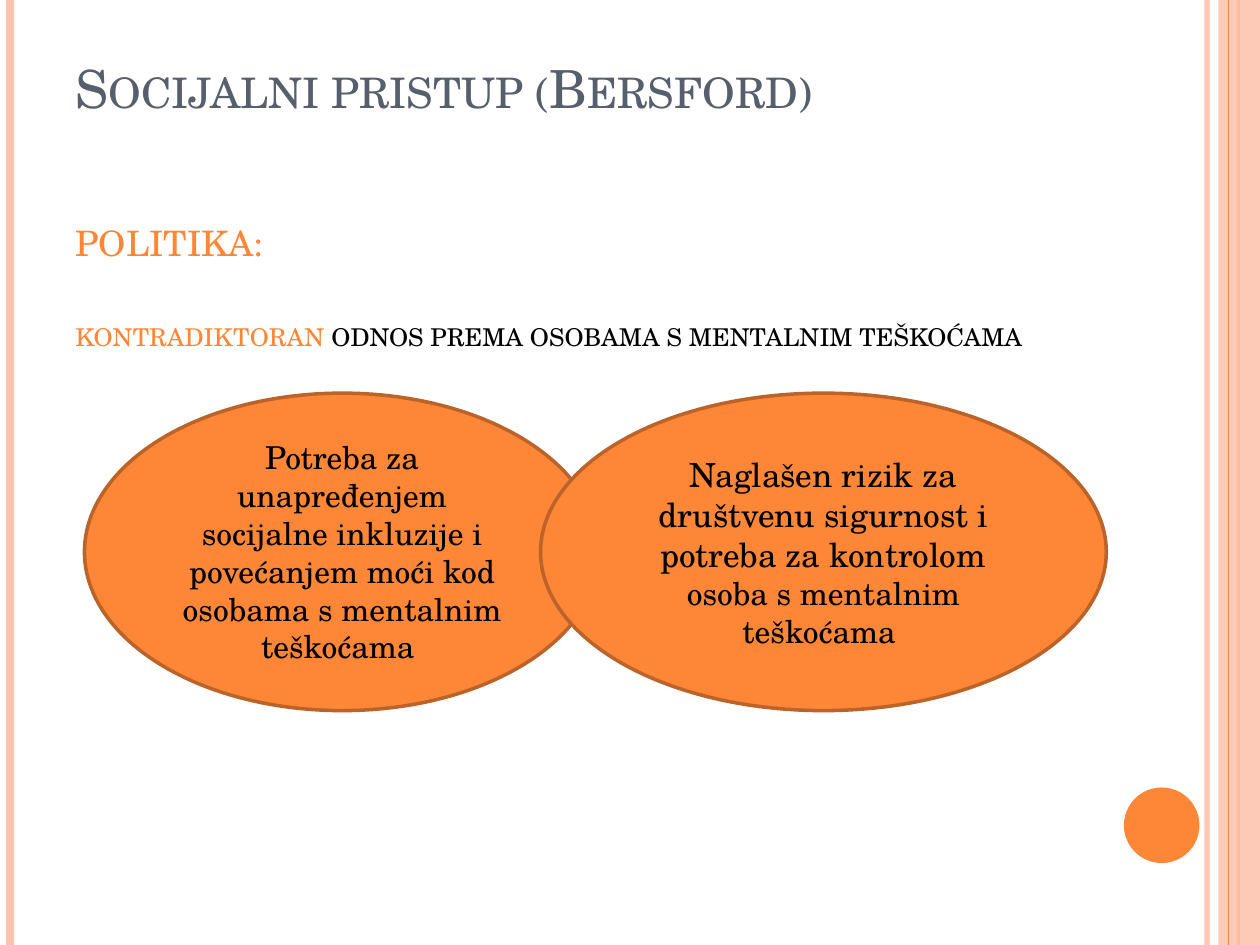
from lxml.etree import SubElement
from pptx import Presentation
from pptx.dml.color import RGBColor
from pptx.enum.shapes import MSO_CONNECTOR as Connector, MSO_SHAPE as Shape
from pptx.enum.text import MSO_ANCHOR as Anchor, PP_ALIGN as Align
from pptx.oxml.ns import qn
from pptx.util import Inches, Pt

COLORS = {"peach": "FEC3AE", "orange": "FE8637", "rust": "BC6329",
          "slate": "575F6D", "black": "000000"}
FONT = "TeX Gyre Schola"


def color(name):
    return RGBColor.from_string(COLORS[name])


def set_opacity(element, percent):
    """Add an alpha value to the solid color inside element."""
    rgb = next(element.iter(qn("a:srgbClr")))
    SubElement(rgb, qn("a:alpha")).set("val", str(percent * 1000))


def add_stripe(page, x, width, name, opacity=100):
    """Draw a vertical line over the full slide height."""
    stripe = page.shapes.add_connector(
        Connector.STRAIGHT, Inches(x), 0, Inches(x), Inches(7.5))
    stripe.line.width = Pt(width)
    stripe.line.color.rgb = color(name)
    properties = stripe._element.spPr
    if opacity < 100:
        set_opacity(properties, opacity)
    SubElement(properties, qn("a:effectLst"))


def add_filled(page, kind, place, fill, outline=None):
    shape = page.shapes.add_shape(kind, *map(Inches, place))
    shape.shadow.inherit = False
    shape.fill.solid()
    shape.fill.fore_color.rgb = color(fill)
    if outline:
        shape.line.color.rgb = color(outline)
        shape.line.width = Pt(2)
    else:
        shape.line.fill.background()
    return shape


def add_span(para, text, size, name="black"):
    span = para.add_run()
    span.text = text
    span.font.name = FONT
    span.font.size = Pt(size)
    span.font.color.rgb = color(name)
    return span


def add_text_box(page, place, anchor=Anchor.TOP):
    frame = page.shapes.add_textbox(*map(Inches, place)).text_frame
    frame.word_wrap = True
    frame.vertical_anchor = anchor
    return frame


def add_bubble(page, place, spans):
    """Draw an outlined ellipse with centred text."""
    frame = add_filled(page, Shape.OVAL, place, "orange", "rust").text_frame
    frame.word_wrap = True
    frame.vertical_anchor = Anchor.MIDDLE
    para = frame.paragraphs[0]
    para.alignment = Align.CENTER
    for text, size in spans:
        add_span(para, text, size)


def add_decoration(page):
    add_stripe(page, 9.58, 3, "peach", 93)
    add_stripe(page, 0.08, 4.5, "peach")
    add_stripe(page, 9.83, 1.5, "orange")
    band = add_filled(page, Shape.RECTANGLE, (9.67, 0, 0.33, 7.5), "peach")
    set_opacity(band._element.spPr, 87)
    add_stripe(page, 9.75, 0.75, "orange")
    add_filled(page, Shape.OVAL, (8.92, 6.25, 0.6, 0.6), "orange")


def main():
    deck = Presentation()
    deck.slide_width, deck.slide_height = Inches(10), Inches(7.5)
    page = deck.slides.add_slide(deck.slide_layouts[6])
    add_decoration(page)

    # Title in small capitals
    title = add_text_box(page, (0.5, 0.3, 8.17, 0.69), Anchor.BOTTOM)
    span = add_span(title.paragraphs[0], "Socijalni pristup (Bersford)", 30, "slate")
    span.font._element.set("cap", "small")

    # Heading and statement
    body = add_text_box(page, (0.5, 1.71, 8.59, 1.2))
    add_span(body.paragraphs[0], "POLITIKA:", 20, "orange")
    statement = body.add_paragraph()
    statement.space_before = Pt(33.6)
    add_span(statement, "KONTRADIKTORAN ", 14, "orange")
    add_span(statement, "ODNOS PREMA OSOBAMA S MENTALNIM TEŠKOĆAMA", 14)

    # Overlapping opposites
    add_bubble(page, (0.67, 3.12, 4.09, 2.52), [
        ("Potreba za unapređenjem socijalne inkluzije i povećanjem moći "
         "kod osobama s mentalnim teškoćama ", 18)])
    add_bubble(page, (4.29, 3.12, 4.49, 2.52), [
        ("Naglašen rizik za društvenu sigurnost i potreba za kontrolom", 19),
        (" osoba s mentalnim teškoćama ", 18)])

    deck.save("out.pptx")


if __name__ == "__main__":
    main()
